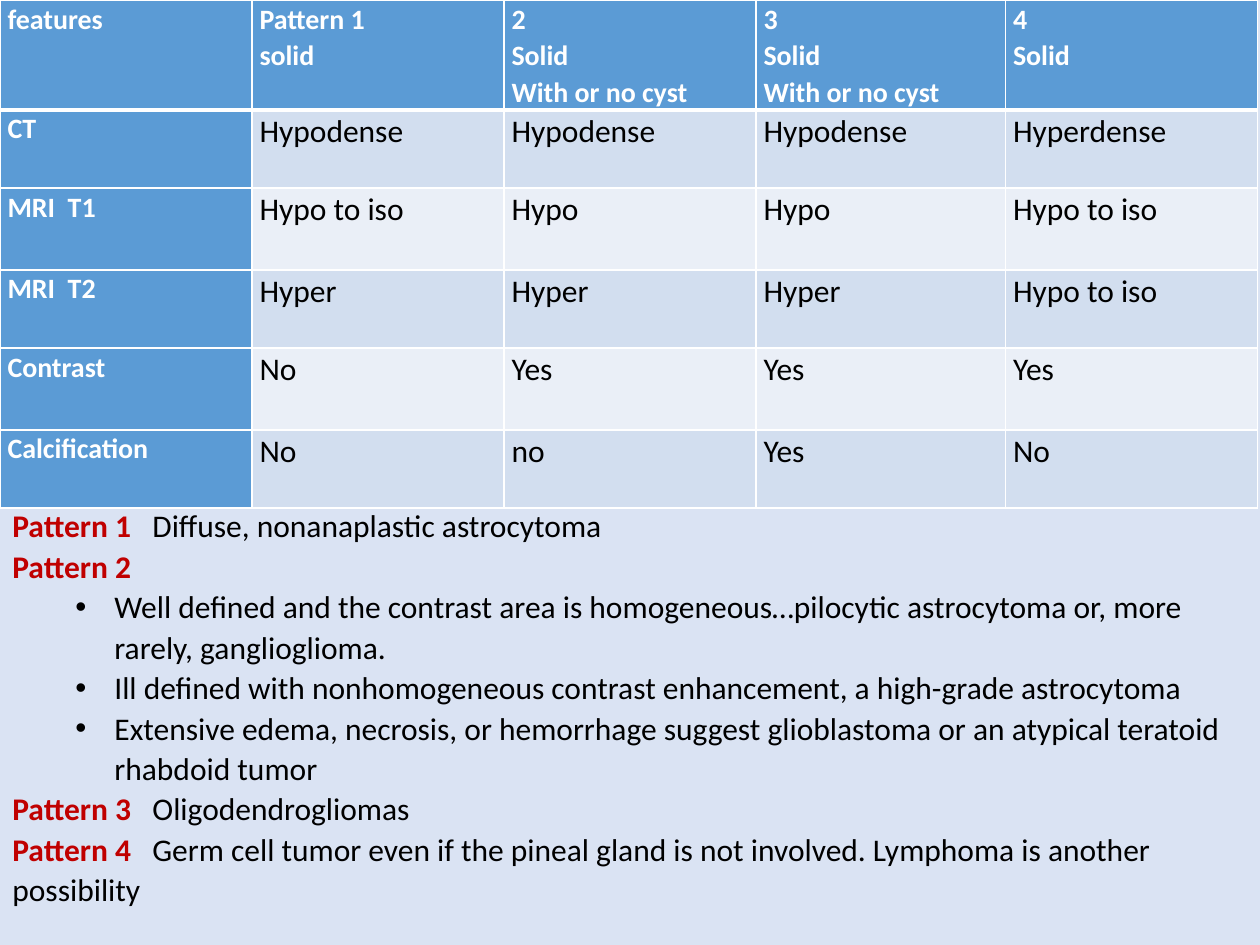
from dataclasses import dataclass

from lxml.etree import SubElement as Sub
from pptx import Presentation
from pptx.dml.color import RGBColor as RGB
from pptx.enum.text import MSO_AUTO_SIZE as Auto
from pptx.oxml.ns import qn
from pptx.util import Inches, Pt


@dataclass(frozen=True)
class Theme:
    font: str = "Calibri"
    back: str = "DAE3F3"
    head: str = "5B9BD5"
    bands: tuple = ("D2DEEF", "EAEFF7")
    white: str = "FFFFFF"
    black: str = "000000"
    red: str = "C00000"
    small: int = 16
    body: int = 18
    lead: float = 1.07
    thin: int = 1
    thick: int = 3


@dataclass(frozen=True)
class Note:
    label: str = ""
    text: str = ""
    bullet: bool = False


THEME = Theme()
COLS = (2, 2, 2, 1.98, 2)
ROWS = (0.79, 0.62, 0.65, 0.62, 0.65, 0.62)
CELLS = (
    ("features", "Pattern 1\nsolid", "2\nSolid\nWith or no cyst",
     "3\nSolid\nWith or no cyst", "4\nSolid"),
    ("CT", "Hypodense", "Hypodense", "Hypodense", "Hyperdense"),
    ("MRI  T1", "Hypo to iso", "Hypo", "Hypo", "Hypo to iso"),
    ("MRI  T2", "Hyper", "Hyper", "Hyper", "Hypo to iso"),
    ("Contrast", "No", "Yes", "Yes", "Yes"),
    ("Calcification", "No", "no", "Yes", "No"),
)
NOTES = (
    Note("Pattern 1", "   Diffuse, nonanaplastic astrocytoma"),
    Note("Pattern 2"),
    Note(text="Well defined and the contrast area is homogeneous…pilocytic "
              "astrocytoma or, more rarely, ganglioglioma.", bullet=True),
    Note(text="Ill defined with nonhomogeneous contrast enhancement, "
              "a high-grade astrocytoma", bullet=True),
    Note(text="Extensive edema, necrosis, or hemorrhage suggest glioblastoma "
              "or an atypical teratoid rhabdoid tumor", bullet=True),
    Note("Pattern 3", "   Oligodendrogliomas"),
    Note("Pattern 4", "   Germ cell tumor even if the pineal gland is not "
                      "involved. Lymphoma is another possibility"),
)


def style(run, size: int, color: str, bold: bool) -> None:
    font = run.font
    font.name, font.size, font.bold = THEME.font, Pt(size), bold
    font.color.rgb = RGB.from_string(color)


def edge(cell, side: str, width: int) -> None:
    line = Sub(cell._tc.get_or_add_tcPr(), qn(f"a:ln{side}"), w=str(Pt(width)))
    fill = Sub(line, qn("a:solidFill"))
    Sub(fill, qn("a:srgbClr"), val=THEME.white)


def draw_cell(cell, text: str, row: int, col: int) -> None:
    title = row == 0 or col == 0
    # Borders come before the fill in the cell properties
    for side in "LRTB":
        rule = (row, side) in ((0, "B"), (1, "T"))
        edge(cell, side, THEME.thick if rule else THEME.thin)
    cell.fill.solid()
    shade = THEME.head if title else THEME.bands[(row - 1) % 2]
    cell.fill.fore_color.rgb = RGB.from_string(shade)
    cell.margin_left = cell.margin_right = Inches(0.06)
    cell.margin_top = cell.margin_bottom = 0
    cell.text_frame.text = text
    for par in cell.text_frame.paragraphs:
        par.line_spacing = THEME.lead
        for run in par.runs:
            if title:
                style(run, THEME.small, THEME.white, True)
            else:
                style(run, THEME.body, THEME.black, False)


def draw_table(slide) -> None:
    table = slide.shapes.add_table(
        len(ROWS), len(COLS), 0, 0,
        Inches(sum(COLS)), Inches(sum(ROWS))).table
    for col, width in zip(table.columns, COLS):
        col.width = Inches(width)
    for row, height in zip(table.rows, ROWS):
        row.height = Inches(height)
    for i, line in enumerate(CELLS):
        for j, text in enumerate(line):
            draw_cell(table.cell(i, j), text, i, j)


def draw_note(par, note: Note) -> None:
    par.line_spacing = THEME.lead
    if note.bullet:
        par.level = 1
        props = par._p.get_or_add_pPr()
        props.set("marL", str(Inches(0.81)))
        props.set("indent", str(Inches(-0.31)))
        Sub(props, qn("a:buFont"), typeface="Arial")
        Sub(props, qn("a:buChar"), char="•")
    parts = ((note.label, THEME.red, True), (note.text, THEME.black, False))
    for text, color, bold in parts:
        if text:
            run = par.add_run()
            run.text = text
            style(run, THEME.body, color, bold)


def draw_notes(slide) -> None:
    box = slide.shapes.add_textbox(0, Inches(3.95), Inches(10), Inches(3.46))
    frame = box.text_frame
    frame.word_wrap = True
    frame.auto_size = Auto.SHAPE_TO_FIT_TEXT
    for i, note in enumerate(NOTES):
        par = frame.add_paragraph() if i else frame.paragraphs[0]
        draw_note(par, note)


def main() -> None:
    deck = Presentation()
    deck.slide_width, deck.slide_height = Inches(10), Inches(7.5)
    slide = deck.slides.add_slide(deck.slide_layouts[6])
    # Background
    fill = slide.background.fill
    fill.solid()
    fill.fore_color.rgb = RGB.from_string(THEME.back)
    # Feature table, then the diagnoses below it
    draw_table(slide)
    draw_notes(slide)
    deck.save("out.pptx")


if __name__ == "__main__":
    main()
